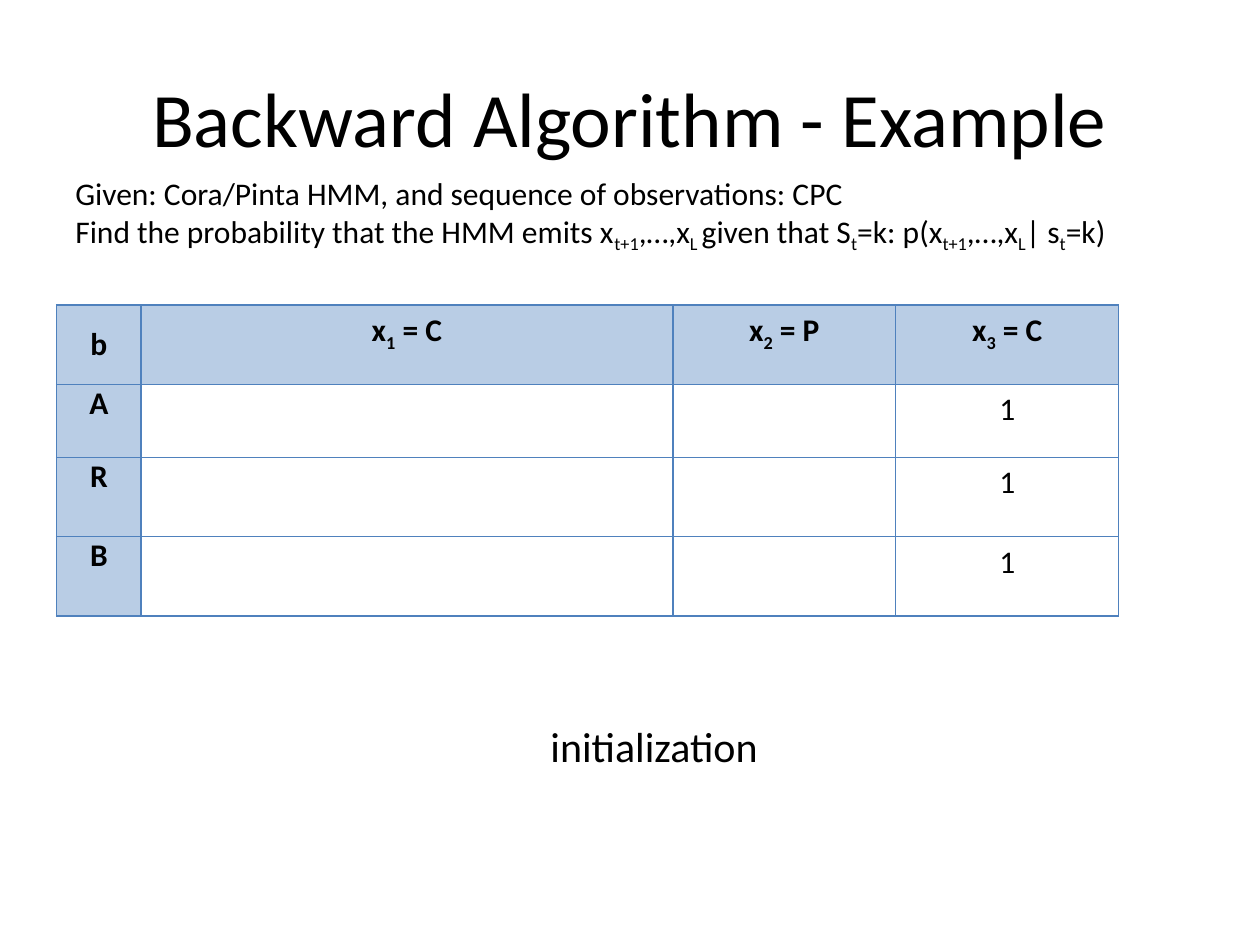
"""Build the backward algorithm initialization slide."""
import lxml.etree
import pptx
import pptx.dml.color
import pptx.enum.text
import pptx.oxml
import pptx.oxml.ns
import pptx.util

Inches = pptx.util.Inches
Align = pptx.enum.text.PP_ALIGN
Anchor = pptx.enum.text.MSO_ANCHOR
BLACK = pptx.dml.color.RGBColor(0x00, 0x00, 0x00)
WHITE = pptx.dml.color.RGBColor(0xFF, 0xFF, 0xFF)
HEADER = pptx.dml.color.RGBColor(0xB9, 0xCD, 0xE5)
BORDER = pptx.dml.color.RGBColor(0x4F, 0x81, 0xBD)


def write_text(frame, text, size=18, bold=False, align=Align.LEFT, font="Calibri"):
    """Write one paragraph per line; text between tildes is subscript."""
    for number, line in enumerate(text.split("\n")):
        para = frame.add_paragraph() if number else frame.paragraphs[0]
        para.alignment = align
        for index, part in enumerate(line.split("~")):
            if not part:
                continue
            span = para.add_run()
            span.text = part
            span.font.name = font
            span.font.size = pptx.util.Pt(size)
            span.font.bold = bold
            span.font.color.rgb = BLACK
            if index % 2:
                span._r.get_or_add_rPr().set("baseline", "-25000")


def outline_cell(cell):
    properties = cell._tc.get_or_add_tcPr()
    for index, side in enumerate(("lnL", "lnR", "lnT", "lnB")):
        line = pptx.oxml.parse_xml(
            f'<a:{side} {pptx.oxml.ns.nsdecls("a")} w="{pptx.util.Pt(1)}">'
            f'<a:solidFill><a:srgbClr val="{BORDER}"/></a:solidFill></a:{side}>'
        )
        properties.insert(index, line)


class SlideBuilder:
    """Hold the current page and add styled elements to it."""

    def __init__(self, page):
        self.page = page

    def add_text(self, left, top, width, height, text, anchor=Anchor.TOP, **style):
        box = self.page.shapes.add_textbox(
            Inches(left), Inches(top), Inches(width), Inches(height)
        )
        box.text_frame.word_wrap = True
        box.text_frame.vertical_anchor = anchor
        write_text(box.text_frame, text, **style)

    def add_grid(self, left, top, widths, heights, rows):
        table = self.page.shapes.add_table(
            len(heights), len(widths), Inches(left), Inches(top),
            Inches(sum(widths)), Inches(sum(heights))
        ).table
        for column, width in zip(table.columns, widths):
            column.width = Inches(width)
        for row, height in zip(table.rows, heights):
            row.height = Inches(height)
        for r, values in enumerate(rows):
            for c, value in enumerate(values):
                cell = table.cell(r, c)
                is_header = r == 0 or c == 0
                cell.fill.solid()
                cell.fill.fore_color.rgb = HEADER if is_header else WHITE
                if c == 0:
                    cell.margin_left = cell.margin_right = 0
                    cell.margin_top = cell.margin_bottom = 0
                if r == c == 0:
                    cell.vertical_anchor = Anchor.MIDDLE
                write_text(cell.text_frame, value, bold=is_header, align=Align.CENTER)
                outline_cell(cell)


def main():
    deck = pptx.Presentation()
    deck.slide_width = Inches(10)
    deck.slide_height = Inches(7.5)
    builder = SlideBuilder(deck.slides.add_slide(deck.slide_layouts[6]))

    builder.add_text(0.5, 0.3, 9, 1.25, "Backward Algorithm - Example",
                     anchor=Anchor.MIDDLE, size=44, align=Align.CENTER)
    header = ["b"] + [f"x~{t}~ = {symbol}" for t, symbol in enumerate("CPC", 1)]
    states = [[state, "", "", "1"] for state in "ARB"]
    builder.add_grid(0.45, 2.42, [0.67, 4.22, 1.77, 1.77],
                     [0.63, 0.58, 0.63, 0.63], [header] + states)
    builder.add_text(
        0.5, 1.33, 8.56, 1.01,
        "Given: Cora/Pinta HMM, and sequence of observations: CPC\n"
        "Find the probability that the HMM emits x~t+1~,…,x~L ~given that "
        "S~t~=k: p(x~t+1~,…,x~L~| s~t~=k)")
    builder.add_text(4.27, 5.67, 1.87, 0.5, "initialization", size=24)
    deck.save("out.pptx")


if __name__ == "__main__":
    main()
